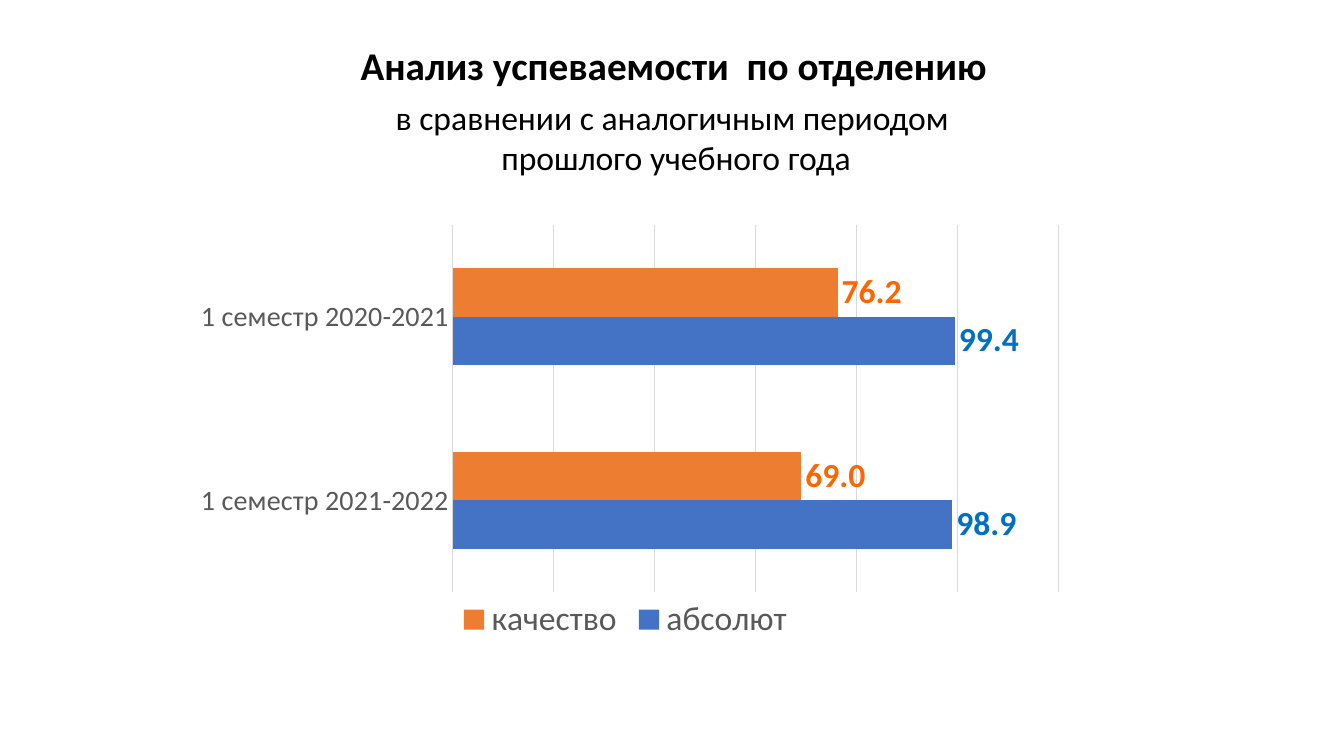
import pptx
import pptx.util
import pptx.chart.data
import pptx.dml.color
import pptx.enum.chart
import pptx.enum.text
import pptx.oxml

TITLE = "Анализ успеваемости  по отделению"
LINES = ["в сравнении с аналогичным периодом ", "прошлого учебного года"]
TERMS = ["1 семестр 2021-2022", "1 семестр 2020-2021"]
SERIES = [
    ("абсолют", (98.9, 99.4), "blue", "azure"),
    ("качество", (69, 76.2), "orange", "flame"),
]
COLORS = {
    "black": "000000", "gray": "595959", "grid": "D9D9D9",
    "blue": "4472C4", "azure": "0070C0",
    "orange": "ED7D31", "flame": "FF6600",
}
PLACES = {
    "title": (2.18, 0.36, 9, 0.63),
    "lines": (3.72, 0.91, 5.97, 0.91),
    "chart": (1.84, 2.14, 8.84, 4.45),
}
PLOT = {"x": 0.3, "y": 0.02, "w": 0.68, "h": 0.82}
LEGEND = {"x": 0.3, "y": 0.84}


def place(name):
    return [pptx.util.Inches(n) for n in PLACES[name]]


def color(name):
    return pptx.dml.color.RGBColor.from_string(COLORS[name])


def apply(item, values):
    for key, value in values.items():
        setattr(item, key, value)


def style(font, size, name, bold=False):
    apply(font, {"size": pptx.util.Pt(size), "name": "Calibri", "bold": bold})
    font.color.rgb = color(name)


def stroke(line):
    line.color.rgb = color("grid")
    line.width = pptx.util.Pt(0.75)


def layout(parent, box, before, inner=False):
    for old in parent.findall(pptx.oxml.ns.qn("c:layout")):
        parent.remove(old)
    target = '<c:layoutTarget val="inner"/>' if inner else ""
    modes = "".join(f'<c:{k}Mode val="edge"/>' for k in "xy")
    sizes = "".join(f'<c:{k} val="{v}"/>' for k, v in box.items())
    node = pptx.oxml.parse_xml(
        f'<c:layout {pptx.oxml.ns.nsdecls("c")}><c:manualLayout>'
        f"{target}{modes}{sizes}</c:manualLayout></c:layout>")
    parent.insert(before, node)


def heading(slide):
    title = slide.shapes.title
    apply(title, dict(zip(("left", "top", "width", "height"), place("title"))))
    frame = title.text_frame
    frame.text = TITLE
    apply(frame, {"vertical_anchor": pptx.enum.text.MSO_ANCHOR.MIDDLE,
                  "word_wrap": True})
    para = frame.paragraphs[0]
    apply(para, {"alignment": pptx.enum.text.PP_ALIGN.CENTER,
                 "line_spacing": 0.9})
    style(para.runs[0].font, 28, "black", True)

    frame = slide.shapes.add_textbox(*place("lines")).text_frame
    apply(frame, {"text": "\n".join(LINES), "word_wrap": False,
                  "auto_size": pptx.enum.text.MSO_AUTO_SIZE.SHAPE_TO_FIT_TEXT})
    for para in frame.paragraphs:
        para.alignment = pptx.enum.text.PP_ALIGN.CENTER
        style(para.runs[0].font, 24, "black")


def graph(slide):
    enum = pptx.enum.chart
    data = pptx.chart.data.CategoryChartData(number_format="0.0")
    data.categories = TERMS
    for name, values, _, _ in SERIES:
        data.add_series(name, values)
    chart = slide.shapes.add_chart(
        enum.XL_CHART_TYPE.BAR_CLUSTERED, *place("chart"), data).chart
    apply(chart, {"has_title": False, "has_legend": True})
    style(chart.font, 14, "black")
    apply(chart.legend, {"position": enum.XL_LEGEND_POSITION.BOTTOM,
                         "include_in_layout": False})
    style(chart.legend.font, 24, "gray")

    axis = chart.category_axis
    apply(axis, {"major_tick_mark": enum.XL_TICK_MARK.NONE,
                 "minor_tick_mark": enum.XL_TICK_MARK.NONE})
    style(axis.tick_labels.font, 20, "gray")
    stroke(axis.format.line)
    axis = chart.value_axis
    apply(axis, {"minimum_scale": 0, "maximum_scale": 120, "major_unit": 20,
                 "has_major_gridlines": True, "visible": False})
    stroke(axis.major_gridlines.format.line)

    plot = chart.plots[0]
    apply(plot, {"gap_width": 182, "overlap": 0, "vary_by_categories": False})
    for series, (_, _, fill, ink) in zip(plot.series, SERIES):
        series.format.fill.solid()
        series.format.fill.fore_color.rgb = color(fill)
        labels = series.data_labels
        apply(labels, {"show_value": True, "number_format": "0.0",
                       "number_format_is_linked": False,
                       "position": enum.XL_LABEL_POSITION.OUTSIDE_END})
        style(labels.font, 24, ink, True)

    root = chart.element
    layout(root.find(".//" + pptx.oxml.ns.qn("c:plotArea")), PLOT, 0, True)
    layout(root.find(".//" + pptx.oxml.ns.qn("c:legend")), LEGEND, 1)


def main():
    deck = pptx.Presentation()
    apply(deck, {"slide_width": pptx.util.Inches(13.33),
                 "slide_height": pptx.util.Inches(7.5)})
    slide = deck.slides.add_slide(deck.slide_layouts[5])
    heading(slide)
    graph(slide)
    deck.save("out.pptx")


if __name__ == "__main__":
    main()
